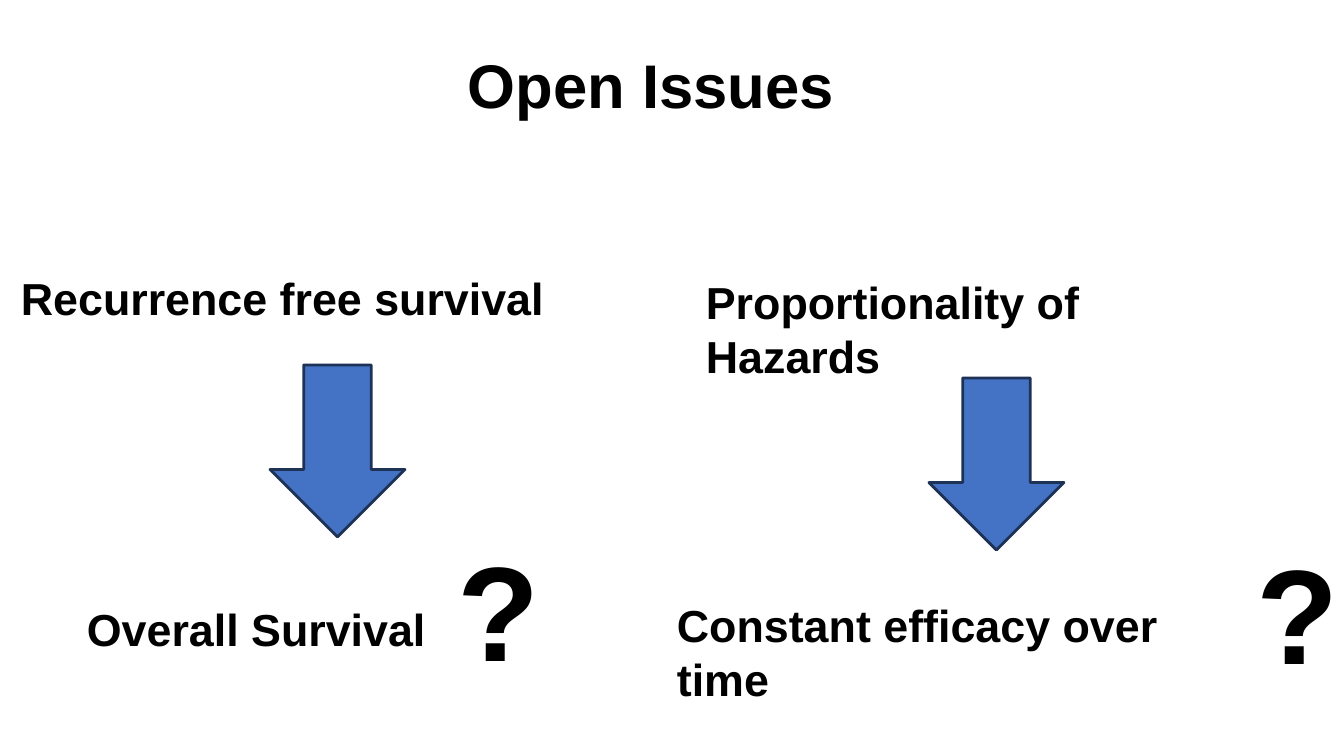
from pptx import Presentation
from pptx import util as u
from pptx.dml.color import RGBColor
from pptx.enum import shapes, text

BLACK = RGBColor(0x00, 0x00, 0x00)
WHITE = RGBColor(0xFF, 0xFF, 0xFF)
BLUE = RGBColor(0x44, 0x72, 0xC4)
NAVY = RGBColor(0x1E, 0x32, 0x56)
FONT = "Arial"
EMU_PER_PX = 914400 / 100.8


def px(count):
    """Turn whole pixels into EMU."""
    return u.Emu(round(count * EMU_PER_PX))


class Slide:
    """Hold the slide style and add its elements."""

    def __init__(self, deck):
        """Add a blank white page."""
        self.page = deck.slides.add_slide(deck.slide_layouts[6])
        fill = self.page.background.fill
        fill.solid()
        fill.fore_color.rgb = WHITE

    def label(self, words, left, top, width, height, size=32):
        """Add one line of bold text."""
        box = self.page.shapes.add_textbox(*map(px, (left, top, width, height)))
        frame = box.text_frame
        frame.word_wrap = False
        frame.auto_size = text.MSO_AUTO_SIZE.SHAPE_TO_FIT_TEXT
        span = frame.paragraphs[0].add_run()
        span.text = words
        span.font.name = FONT
        span.font.size = u.Pt(size)
        span.font.bold = True
        span.font.color.rgb = BLACK

    def down_arrow(self, left, top):
        """Add a block arrow pointing down."""
        arrow = self.page.shapes.add_shape(
            shapes.MSO_SHAPE.DOWN_ARROW, *map(px, (left, top, 135, 172)))
        arrow.shadow.inherit = False
        arrow.fill.solid()
        arrow.fill.fore_color.rgb = BLUE
        arrow.line.color.rgb = NAVY
        arrow.line.width = u.Pt(2)


def main():
    """Build and save the deck."""
    deck = Presentation()
    deck.slide_width, deck.slide_height = px(1344), px(756)
    slide = Slide(deck)
    slide.label("Open Issues", 458, 42, 390, 85, 44)
    for words, left, top, width in (
        ("Recurrence free survival", 11, 266, 547),
        ("Overall Survival", 77, 597, 362),
        ("Proportionality of Hazards", 696, 270, 579),
        ("Constant efficacy over time", 667, 593, 604),
    ):
        slide.label(words, left, top, width, 65)
    for left, top in ((270, 365), (929, 378)):
        slide.down_arrow(left, top)
    for left, top in ((448, 522), (1247, 525)):
        slide.label("?", left, top, 103, 173, 96)
    deck.save("out.pptx")


if __name__ == "__main__":
    main()
